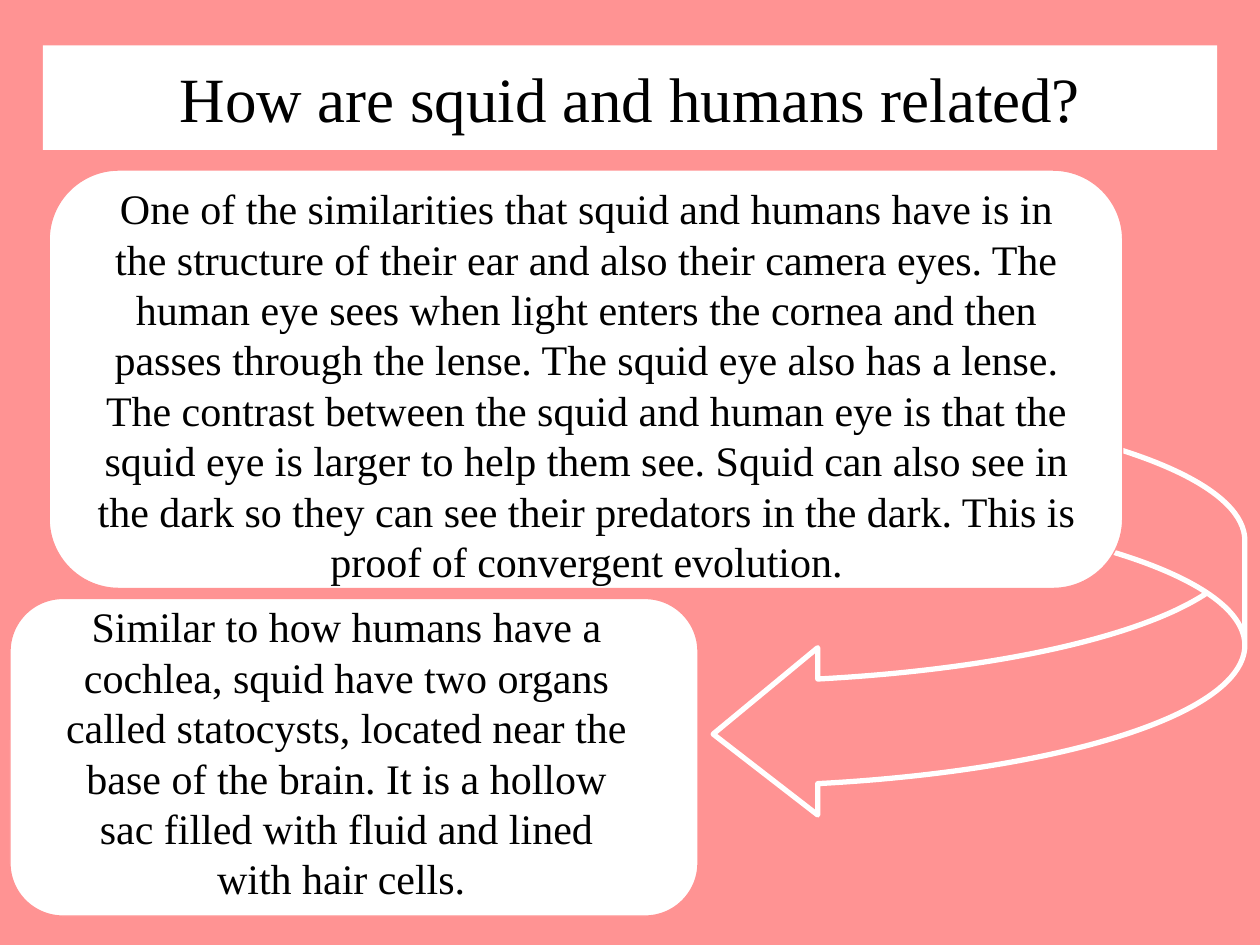
from pptx import Presentation
from pptx.dml.color import RGBColor
from pptx.enum.shapes import MSO_SHAPE as Shape
from pptx.enum.text import MSO_ANCHOR as Anchor, PP_ALIGN as Align
from pptx.util import Inches, Pt

PINK = RGBColor(0xFF, 0x93, 0x93)
WHITE = RGBColor(0xFF, 0xFF, 0xFF)
BLACK = RGBColor(0, 0, 0)
FONT = "Times New Roman"
WIDTH, HEIGHT = 10, 7.5

TITLE = "How are squid and humans related?"
TITLE_BOX = (0.34, 0.36, 9.32, 0.83)
ARROW_BOX = (5.66, 3.17, 4.22, 3.32)
ARROW_ADJUSTMENTS = (0.25, 0.4, 0.25)
PANELS = [
    {
        "panel": (0.39, 1.35, 8.52, 3.32),
        "text_box": (0.65, 1.35, 8.01, 3.32),
        "text": "One of the similarities that squid and humans have is in the "
                "structure of their ear and also their camera eyes. The human eye "
                "sees when light enters the cornea and then passes through the "
                "lense. The squid eye also has a lense. The contrast between the "
                "squid and human eye is that the squid eye is larger to help them "
                "see. Squid can also see in the dark so they can see their "
                "predators in the dark. This is proof of convergent evolution.",
    },
    {
        "panel": (0.08, 4.75, 5.46, 2.52),
        "text_box": (0.39, 4.67, 4.72, 2.4),
        "text": "Similar to how humans have a cochlea, squid have two organs "
                "called statocysts, located near the base of the brain. It is a "
                "hollow sac filled with fluid and lined with hair cells. ",
    },
]


def add_shape(slide, kind, box, fill=None, line=None, weight=0.75):
    sp = slide.shapes.add_shape(kind, *map(Inches, box))
    sp.shadow.inherit = False
    if fill is None:
        sp.fill.background()
    else:
        sp.fill.solid()
        sp.fill.fore_color.rgb = fill
    if line is None:
        sp.line.fill.background()
    else:
        sp.line.color.rgb = line
        sp.line.width = Pt(weight)
    return sp


def write(sp, text, size, anchor):
    tf = sp.text_frame
    tf.word_wrap = True
    tf.vertical_anchor = anchor
    tf.margin_left = tf.margin_right = Inches(0.1)
    tf.margin_top = tf.margin_bottom = Inches(0.1)
    p = tf.paragraphs[0]
    p.text = text
    p.alignment = Align.CENTER
    p.font.name = FONT
    p.font.size = Pt(size)
    p.font.color.rgb = BLACK


def main():
    prs = Presentation()
    prs.slide_width, prs.slide_height = Inches(WIDTH), Inches(HEIGHT)
    slide = prs.slides.add_slide(prs.slide_layouts[6])
    slide.background.fill.solid()
    slide.background.fill.fore_color.rgb = PINK

    arrow = add_shape(slide, Shape.CURVED_LEFT_ARROW, ARROW_BOX, line=WHITE, weight=3)
    for i, value in enumerate(ARROW_ADJUSTMENTS):
        arrow.adjustments[i] = value

    title = add_shape(slide, Shape.RECTANGLE, TITLE_BOX, fill=WHITE)
    write(title, TITLE, 36, Anchor.MIDDLE)

    for item in PANELS:
        add_shape(slide, Shape.ROUNDED_RECTANGLE, item["panel"], WHITE, PINK)
    for item in PANELS:
        box = slide.shapes.add_textbox(*map(Inches, item["text_box"]))
        write(box, item["text"], 24, Anchor.TOP)

    prs.save("out.pptx")


if __name__ == "__main__":
    main()
